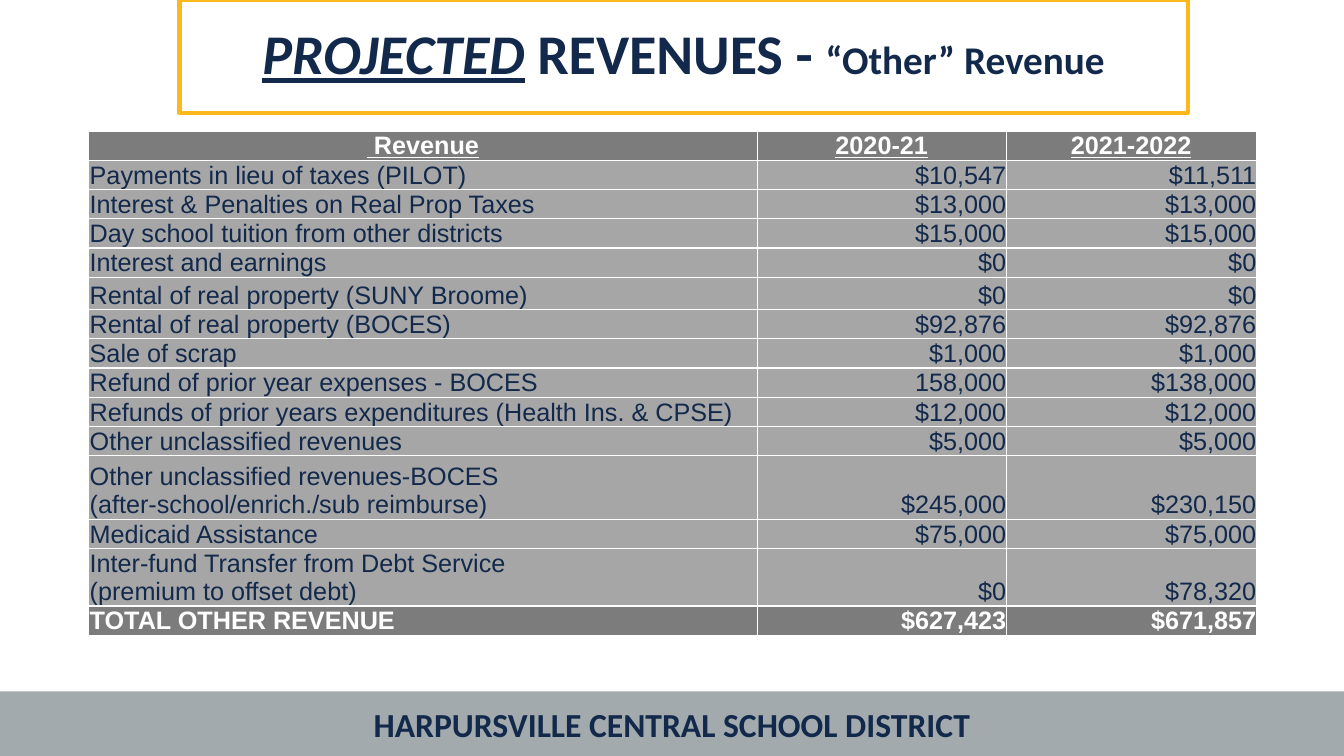
from pptx import Presentation
from pptx.dml.color import RGBColor
from pptx.enum.shapes import MSO_SHAPE as Shape
from pptx.enum.text import MSO_ANCHOR as Anchor, MSO_AUTO_SIZE as Fit, PP_ALIGN as Align
from pptx.oxml import parse_xml
from pptx.oxml.ns import nsdecls
from pptx.util import Inches, Pt

NAVY = RGBColor(0x13, 0x29, 0x4B)
GOLD = RGBColor(0xFF, 0xB8, 0x1C)
SILVER = RGBColor(0xA2, 0xAA, 0xAD)
DARK = RGBColor(0x7C, 0x7C, 0x7C)
LIGHT = RGBColor(0xA6, 0xA6, 0xA6)
WHITE = RGBColor(0xFF, 0xFF, 0xFF)

TITLE = [
    ("PROJECTED", {"size": Pt(40), "italic": True, "underline": True}),
    (" REVENUES - ", {"size": Pt(40)}),
    ("“Other” Revenue", {"size": Pt(28)}),
]
FOOTER = "HARPURSVILLE CENTRAL SCHOOL DISTRICT"
COLS = [6.63, 2.47, 2.48]
# Row height, label, amount for each year
ROWS = [
    (0.27, " Revenue", "2020-21", "2021-2022"),
    (0.27, "Payments in lieu of taxes (PILOT)", "$10,547", "$11,511"),
    (0.27, "Interest & Penalties on Real Prop Taxes", "$13,000", "$13,000"),
    (0.27, "Day school tuition from other districts", "$15,000", "$15,000"),
    (0.27, "Interest and earnings", "$0", "$0"),
    (0.32, "Rental of real property (SUNY Broome)", "$0", "$0"),
    (0.27, "Rental of real property (BOCES)", "$92,876", "$92,876"),
    (0.27, "Sale of scrap", "$1,000", "$1,000"),
    (0.27, "Refund of prior year expenses - BOCES", "158,000", "$138,000"),
    (0.27, "Refunds of prior years expenditures (Health Ins. & CPSE)", "$12,000", "$12,000"),
    (0.27, "Other unclassified revenues", "$5,000", "$5,000"),
    (0.63, "Other unclassified revenues-BOCES\n(after-school/enrich./sub reimburse)",
     "$245,000", "$230,150"),
    (0.27, "Medicaid Assistance", "$75,000", "$75,000"),
    (0.54, "Inter-fund Transfer from Debt Service\n(premium to offset debt)", "$0", "$78,320"),
    (0.27, "TOTAL OTHER REVENUE", "$627,423", "$671,857"),
]


def style(font, color, **values):
    font.color.rgb = color
    for name, value in values.items():
        setattr(font, name, value)


def add_borders(cell):
    props = cell._tc.get_or_add_tcPr()
    for side in "LRTB":
        props.append(parse_xml(
            f'<a:ln{side} {nsdecls("a")} w="{Pt(1)}"><a:solidFill>'
            f'<a:srgbClr val="{WHITE}"/></a:solidFill></a:ln{side}>'))


def add_footer(slide):
    bar = slide.shapes.add_shape(
        Shape.RECTANGLE, 0, Inches(6.86), Inches(13.33), Inches(0.64))
    bar.shadow.inherit = False
    bar.fill.solid()
    bar.fill.fore_color.rgb = SILVER
    bar.line.fill.background()
    frame = bar.text_frame
    frame.text = FOOTER
    frame.vertical_anchor = Anchor.MIDDLE
    para = frame.paragraphs[0]
    para.alignment = Align.CENTER
    style(para.runs[0].font, NAVY, name="Calibri", size=Pt(24), bold=True)


def add_title(slide):
    box = slide.shapes.title
    box.left, box.top, box.width, box.height = map(Inches, (1.78, 0, 10, 1.12))
    box.line.color.rgb = GOLD
    box.line.width = Pt(3)
    frame = box.text_frame
    frame.word_wrap = True
    frame.auto_size = Fit.NONE
    frame.vertical_anchor = Anchor.MIDDLE
    para = frame.paragraphs[0]
    para.alignment = Align.CENTER
    para.line_spacing = 0.9
    for text, look in TITLE:
        run = para.add_run()
        run.text = text
        style(run.font, NAVY, name="Calibri", bold=True, **look)


def fill_cell(cell, text, row, col):
    head, total = row == 0, row == len(ROWS) - 1
    strong = head or total
    add_borders(cell)
    cell.fill.solid()
    cell.fill.fore_color.rgb = DARK if strong else LIGHT
    cell.vertical_anchor = Anchor.BOTTOM
    edge = Inches(0 if col and not head else 0.01)
    cell.margin_left = cell.margin_right = cell.margin_top = edge
    cell.margin_bottom = 0
    cell.text = text
    for para in cell.text_frame.paragraphs:
        para.alignment = Align.CENTER if head else Align.RIGHT if col else Align.LEFT
        style(para.runs[0].font, WHITE if strong else NAVY, name="Arial",
              size=Pt(18), bold=strong, underline=head)


def add_revenues(slide):
    high = sum(row[0] for row in ROWS)
    table = slide.shapes.add_table(
        len(ROWS), len(COLS), Inches(0.88), Inches(1.3),
        Inches(sum(COLS)), Inches(high)).table
    table.horz_banding = False
    for col, width in enumerate(COLS):
        table.columns[col].width = Inches(width)
    for row, (height, *texts) in enumerate(ROWS):
        table.rows[row].height = Inches(height)
        for col, text in enumerate(texts):
            fill_cell(table.cell(row, col), text, row, col)


def main():
    deck = Presentation()
    deck.slide_width, deck.slide_height = Inches(13.33), Inches(7.5)
    slide = deck.slides.add_slide(deck.slide_layouts[5])
    add_footer(slide)
    add_title(slide)
    add_revenues(slide)
    deck.save("out.pptx")


if __name__ == "__main__":
    main()
